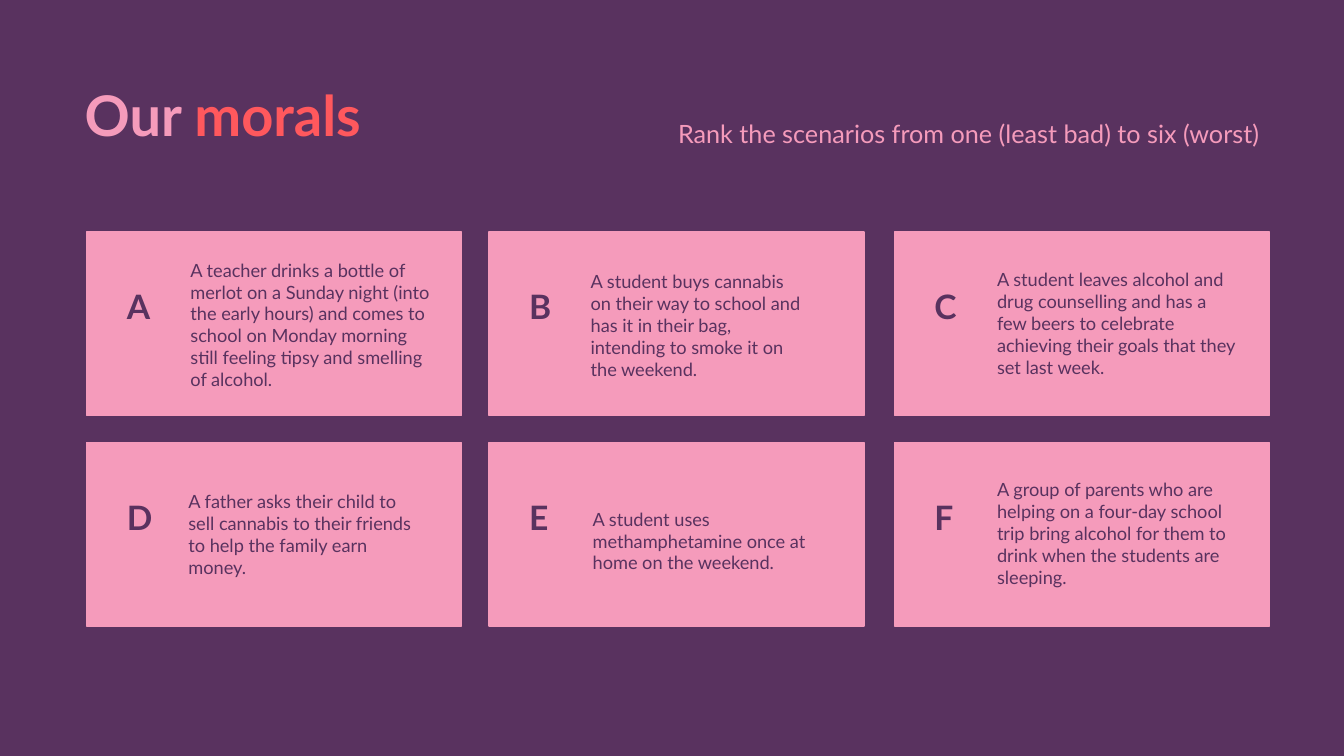
from pptx import Presentation
from pptx.dml.color import RGBColor
from pptx.enum.shapes import MSO_SHAPE
from pptx.enum.text import MSO_ANCHOR, MSO_AUTO_SIZE, PP_ALIGN
from pptx.util import Inches, Pt

RECTANGLE = MSO_SHAPE.RECTANGLE
TOP, BOTTOM = MSO_ANCHOR.TOP, MSO_ANCHOR.BOTTOM
LEFT, RIGHT = PP_ALIGN.LEFT, PP_ALIGN.RIGHT
FIXED = MSO_AUTO_SIZE.NONE

PURPLE, PINK, CORAL = "59325F", "F59BBB", "FF585D"
FONT = "Lato"
TITLE_ONLY_LAYOUT = 5

COLUMNS = (0.86, 4.85, 8.87)
ROWS = (2.3, 4.39)
CARD_WIDTH, CARD_HEIGHT = 3.72, 1.82

# Letter, wording, and its left, top, width and height within the card
SCENARIOS = (
    ("A", "A teacher drinks a bottle of merlot on a Sunday night (into the early hours) "
          "and comes to school on Monday morning still feeling tipsy and smelling of alcohol.",
     (0.93, 0.15, 2.58, 1.47)),
    ("B", "A student buys cannabis on their way to school and has it in their bag, "
          "intending to smoke it on the weekend.",
     (0.91, 0.5, 2.33, 1.02)),
    ("C", "A student leaves alcohol and drug counselling and has a few beers to celebrate "
          "achieving their goals that they set last week.",
     (0.92, 0.29, 2.59, 1.21)),
    ("D", "A father asks their child to sell cannabis to their friends to help the family "
          "earn money.",
     (0.91, 0.57, 2.41, 0.82)),
    ("E", "A student uses methamphetamine once at home on the weekend.",
     (0.93, 0.53, 2.33, 0.82)),
    ("F", "A group of parents who are helping on a four-day school trip bring alcohol for "
          "them to drink when the students are sleeping.",
     (0.92, 0.4, 2.59, 1.09)),
)


def color(hex_code):
    return RGBColor.from_string(hex_code)


def write(box, *spans, size, bold=False, align=LEFT, anchor=TOP, spacing=None):
    """Fill a box with one paragraph made of (text, colour) spans."""
    frame = box.text_frame
    frame.word_wrap = True
    frame.auto_size = FIXED
    frame.vertical_anchor = anchor
    para = frame.paragraphs[0]
    para.alignment = align
    if spacing:
        para.line_spacing = spacing
    for text, hex_code in spans:
        span = para.add_run()
        span.text = text
        span.font.name = FONT
        span.font.size = Pt(size)
        span.font.bold = bold
        span.font.color.rgb = color(hex_code)


def add_text(page, area, text, hex_code, **text_format):
    box = page.shapes.add_textbox(*map(Inches, area))
    write(box, (text, hex_code), **text_format)


def add_title(page):
    title = page.shapes.title
    title.left, title.top, title.width, title.height = map(Inches, (0.74, 0.82, 7.38, 0.91))
    write(title, ("Our ", PINK), ("morals", CORAL), size=40, bold=True, spacing=0.9)


def add_card(page, left, top, letter, wording, area):
    card = page.shapes.add_shape(
        RECTANGLE, *map(Inches, (left, top, CARD_WIDTH, CARD_HEIGHT)))
    card.shadow.inherit = False
    card.fill.solid()
    card.fill.fore_color.rgb = color(PINK)
    card.line.color.rgb = color(PINK)
    card.line.width = Pt(1)
    add_text(page, (left + 0.3, top + 0.49, 0.47, 0.5), letter, PURPLE, size=24, bold=True)
    inset_left, inset_top, width, height = area
    add_text(page, (left + inset_left, top + inset_top, width, height), wording, PURPLE,
             size=13, anchor=BOTTOM)


def main():
    deck = Presentation()
    deck.slide_width, deck.slide_height = Inches(13.33), Inches(7.5)
    page = deck.slides.add_slide(deck.slide_layouts[TITLE_ONLY_LAYOUT])
    page.background.fill.solid()
    page.background.fill.fore_color.rgb = color(PURPLE)

    add_title(page)
    add_text(page, (4.58, 1.12, 8.01, 0.4),
             "Rank the scenarios from one (least bad) to six (worst)", PINK,
             size=18, align=RIGHT)
    for index, (letter, wording, area) in enumerate(SCENARIOS):
        row, column = divmod(index, len(COLUMNS))
        add_card(page, COLUMNS[column], ROWS[row], letter, wording, area)

    deck.save("out.pptx")


if __name__ == "__main__":
    main()
